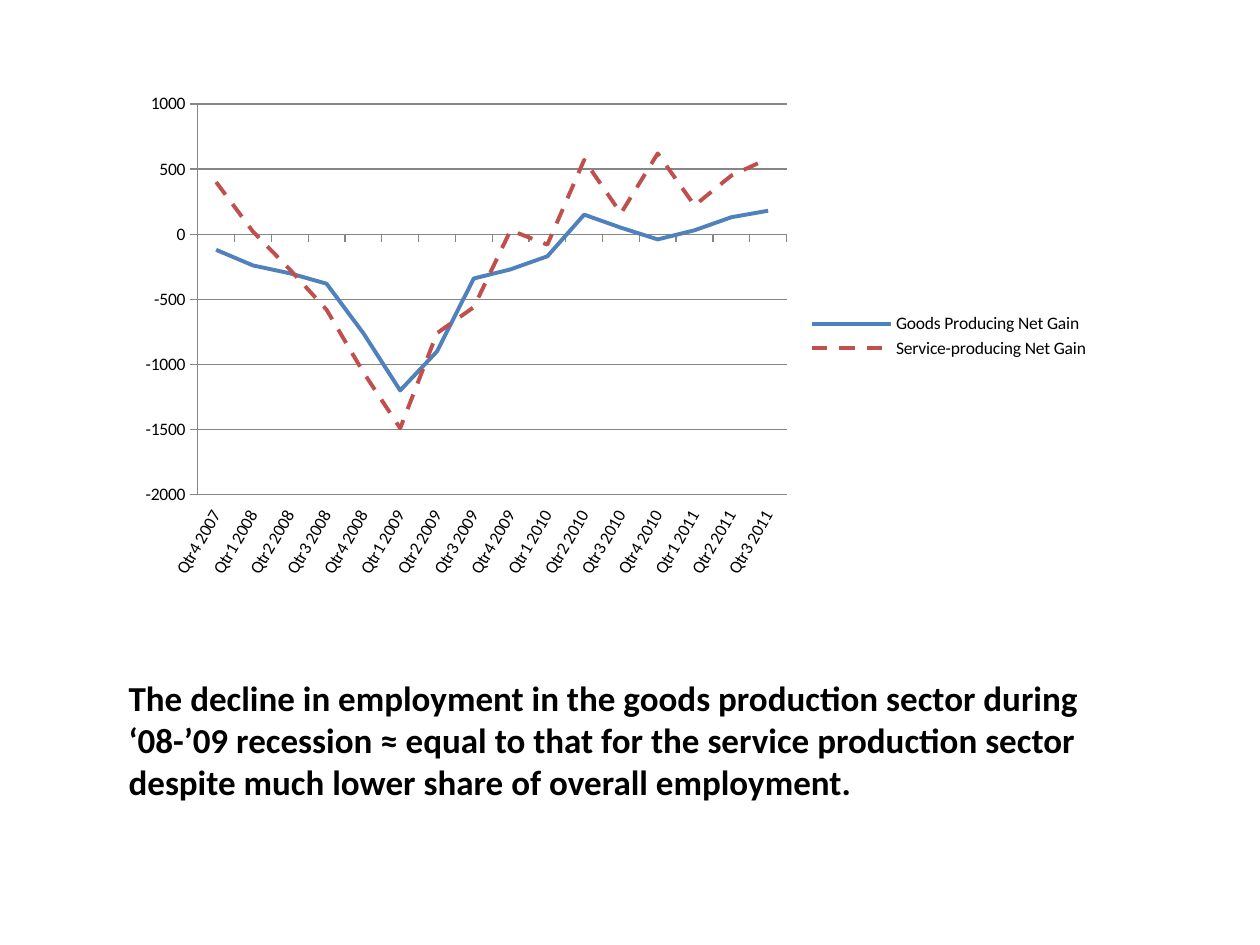
from pptx import Presentation
from pptx.chart.data import CategoryChartData
from pptx.dml.color import RGBColor
from pptx.enum.chart import XL_CHART_TYPE, XL_LEGEND_POSITION, XL_TICK_LABEL_POSITION, XL_TICK_MARK
from pptx.enum.dml import MSO_LINE
from pptx.enum.text import MSO_ANCHOR, MSO_AUTO_SIZE, PP_ALIGN
from pptx.util import Emu, Pt

PX = 914400 // 126
COLORS = {"text": "000000", "axis": "868686", "goods": "4F81BD", "service": "C0504D"}

TITLE = ("The decline in employment in the goods production sector during "
         "‘08-’09 recession ≈ equal to that for the service production sector "
         "despite much lower share of overall employment.")
TITLE_BOX = (116, 620, 1029, 231)
CHART_BOX = (126, 84, 976, 504)

FIRST_QUARTER, QUARTER_COUNT = 2007 * 4 + 3, 16
QUARTERS = [f"Qtr{n % 4 + 1} {n // 4}"
            for n in range(FIRST_QUARTER, FIRST_QUARTER + QUARTER_COUNT)]
SERIES = [
    ("Goods Producing Net Gain", "goods", MSO_LINE.SOLID,
     [-120, -240, -300, -380, -760, -1200, -900, -340,
      -270, -170, 150, 50, -40, 30, 130, 180]),
    ("Service-producing Net Gain", "service", MSO_LINE.DASH,
     [400, 20, -270, -580, -1060, -1490, -760, -560,
      30, -80, 570, 160, 620, 220, 450, 580]),
]


def color(name):
    return RGBColor.from_string(COLORS[name])


def px(*lengths):
    return [Emu(length * PX) for length in lengths]


def set_all(target, values):
    for name, value in values.items():
        setattr(target, name, value)


def style_font(font, size, bold=False):
    set_all(font, {"name": "Calibri", "size": Pt(size), "bold": bold})
    font.color.rgb = color("text")


def style_line(line, color_name, width):
    line.color.rgb = color(color_name)
    line.width = Pt(width)


def add_title(slide):
    title = slide.shapes.title
    set_all(title, dict(zip(("left", "top", "width", "height"), px(*TITLE_BOX))))
    frame = title.text_frame
    frame.text = TITLE
    set_all(frame, {"word_wrap": True, "auto_size": MSO_AUTO_SIZE.NONE,
                    "vertical_anchor": MSO_ANCHOR.BOTTOM,
                    "margin_bottom": Emu(48 * PX)})
    paragraph = frame.paragraphs[0]
    paragraph.alignment = PP_ALIGN.LEFT
    style_font(paragraph.runs[0].font, 20, bold=True)


def add_employment_chart(slide):
    data = CategoryChartData()
    data.categories = QUARTERS
    for name, _, _, values in SERIES:
        data.add_series(name, values)
    chart = slide.shapes.add_chart(XL_CHART_TYPE.LINE, *px(*CHART_BOX), data).chart
    set_all(chart, {"has_title": False, "has_legend": True})
    style_font(chart.font, 10)
    set_all(chart.legend, {"position": XL_LEGEND_POSITION.RIGHT,
                           "include_in_layout": False})

    plot = chart.plots[0]
    plot.vary_by_categories = False
    for series, (_, color_name, dash, _) in zip(plot.series, SERIES):
        series.smooth = False
        style_line(series.format.line, color_name, 2.25)
        series.format.line.dash_style = dash

    quarters, gains = chart.category_axis, chart.value_axis
    for axis in (quarters, gains):
        set_all(axis, {"major_tick_mark": XL_TICK_MARK.OUTSIDE,
                       "minor_tick_mark": XL_TICK_MARK.NONE})
        style_line(axis.format.line, "axis", 0.75)
        style_font(axis.tick_labels.font, 10)
    quarters.tick_label_position = XL_TICK_LABEL_POSITION.LOW
    label_body = quarters._element.find(".//{*}txPr/{*}bodyPr")
    label_body.set("rot", str(-60 * 60000))
    label_body.set("vert", "horz")
    set_all(gains, {"minimum_scale": -2000, "maximum_scale": 1000,
                    "major_unit": 500, "has_major_gridlines": True})
    style_line(gains.major_gridlines.format.line, "axis", 0.75)


def main():
    deck = Presentation()
    deck.slide_width, deck.slide_height = px(1260, 945)
    slide = deck.slides.add_slide(deck.slide_layouts[5])
    add_title(slide)
    add_employment_chart(slide)
    deck.save("out.pptx")


if __name__ == "__main__":
    main()
